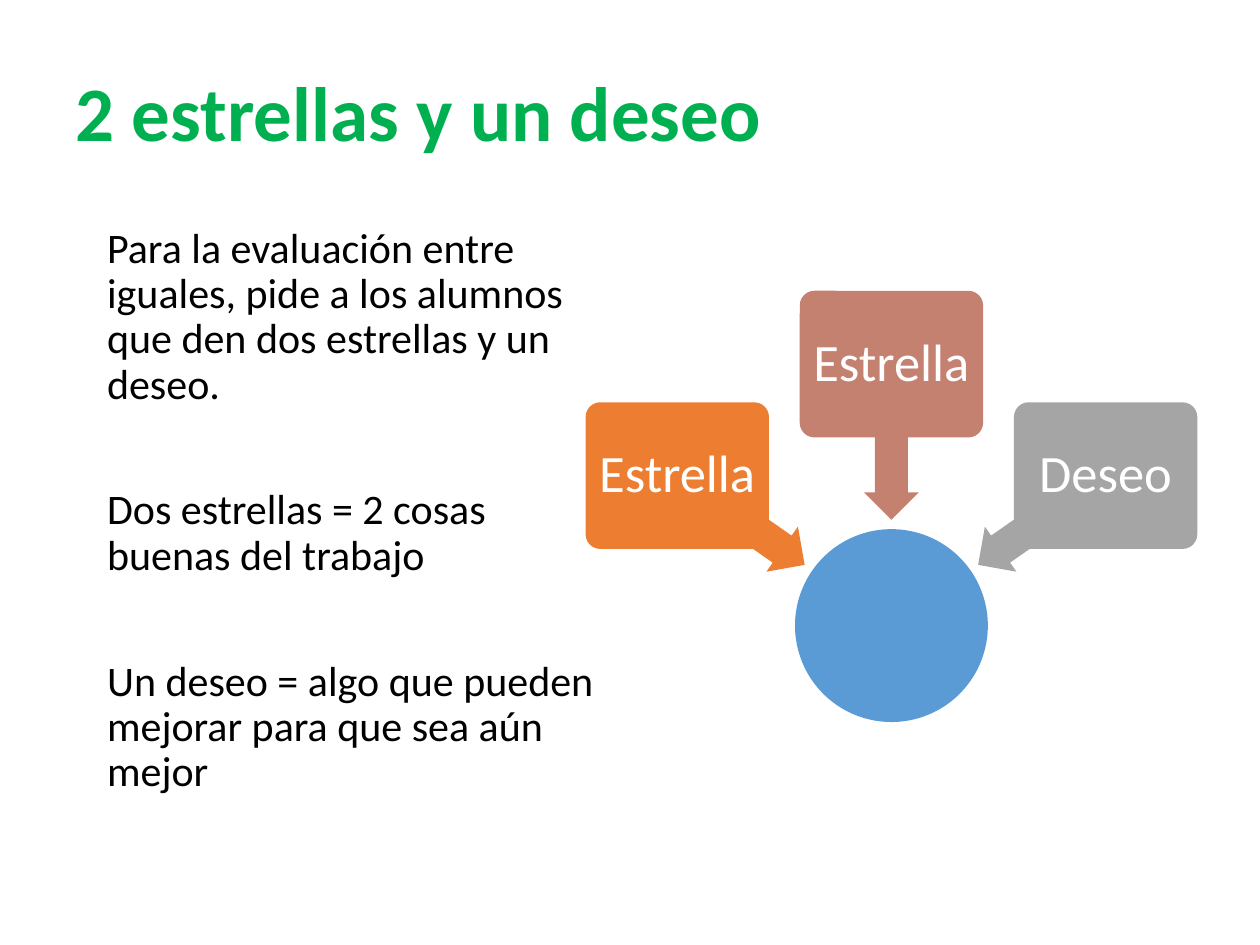
from math import cos, radians, sin

from pptx import Presentation
from pptx.dml.color import RGBColor
from pptx.enum import shapes, text
from pptx.util import Pt

GREEN = RGBColor(0x00, 0xB0, 0x50)
BLACK = RGBColor(0x00, 0x00, 0x00)
WHITE = RGBColor(0xFF, 0xFF, 0xFF)
BLUE = RGBColor(0x5B, 0x9B, 0xD5)
ORANGE = RGBColor(0xED, 0x7D, 0x31)
TERRACOTTA = RGBColor(0xC4, 0x81, 0x70)
GRAY = RGBColor(0xA5, 0xA5, 0xA5)

HUB = (509.4, 357.5)
HUB_SIZE = 110.2
ARROW_RADIUS = 104.8
BOX_RADIUS = 149.4

PARAGRAPHS = [
    "Para la evaluación entre iguales, pide a los alumnos que den dos estrellas y un deseo.",
    "Dos estrellas = 2 cosas buenas del trabajo",
    "Un deseo = algo que pueden mejorar para que sea aún mejor",
]
# Direction from the hub in clockwise degrees, label, colour
SPOKES = [
    (215, "Estrella", ORANGE),
    (270, "Estrella", TERRACOTTA),
    (325, "Deseo", GRAY),
]


def write(para, words, size, color, bold=False, align=text.PP_ALIGN.LEFT, before=0):
    para.alignment = align
    para.line_spacing = 0.9
    para.space_before = Pt(before)
    span = para.add_run()
    span.text = words
    span.font.name = "Calibri"
    span.font.size = Pt(size)
    span.font.bold = bold
    span.font.color.rgb = color


def place(shape, left, top, width, height):
    shape.left, shape.top = Pt(left), Pt(top)
    shape.width, shape.height = Pt(width), Pt(height)


def add_title(page, words):
    title = page.shapes.title
    place(title, 36, 21.6, 648, 90)
    frame = title.text_frame
    frame.auto_size = text.MSO_AUTO_SIZE.NONE
    frame.vertical_anchor = text.MSO_ANCHOR.MIDDLE
    write(frame.paragraphs[0], words, 44, GREEN, bold=True)


def add_body(page, paragraphs):
    body = page.placeholders[1]
    place(body, 36, 126, 318.2, 356.4)
    frame = body.text_frame
    frame.auto_size = text.MSO_AUTO_SIZE.NONE
    for index, words in enumerate(paragraphs):
        para = frame.add_paragraph() if index else frame.paragraphs[0]
        write(para, words, 24, BLACK, before=46 if index else 10)
        properties = para._p.get_or_add_pPr()
        properties.set("marL", str(Pt(18)))
        properties.set("indent", "0")
        properties.insert_element_before(
            properties.makeelement(
                "{http://schemas.openxmlformats.org/drawingml/2006/main}buNone", {}
            ),
            "a:tabLst", "a:defRPr", "a:extLst",
        )


def add_solid(group, kind, center, width, height, color, adjustments=()):
    """Add a borderless filled shape around a centre point."""
    x, y = center
    shape = group.shapes.add_shape(
        kind, Pt(x - width / 2), Pt(y - height / 2), Pt(width), Pt(height)
    )
    shape.shadow.inherit = False
    shape.fill.solid()
    shape.fill.fore_color.rgb = color
    shape.line.fill.background()
    for index, value in enumerate(adjustments):
        shape.adjustments[index] = value
    return shape


def around_hub(angle, radius):
    x, y = HUB
    return x + radius * cos(radians(angle)), y + radius * sin(radians(angle))


def add_spoke(group, angle, label, color):
    """Add a labelled box and the arrow from it to the hub."""
    arrow = add_solid(
        group, shapes.MSO_SHAPE.LEFT_ARROW, around_hub(angle, ARROW_RADIUS),
        88.6, 31.4, color, (0.6, 0.5),
    )
    arrow.rotation = angle
    box = add_solid(
        group, shapes.MSO_SHAPE.ROUNDED_RECTANGLE, around_hub(angle, BOX_RADIUS),
        104.8, 83.8, color, (0.1,),
    )
    frame = box.text_frame
    frame.word_wrap = True
    frame.vertical_anchor = text.MSO_ANCHOR.MIDDLE
    frame.margin_left = frame.margin_right = Pt(4.5)
    frame.margin_top = frame.margin_bottom = Pt(4.5)
    write(frame.paragraphs[0], label, 30, WHITE, align=text.PP_ALIGN.CENTER)


def main():
    deck = Presentation()
    deck.slide_width, deck.slide_height = Pt(720), Pt(540)
    page = deck.slides.add_slide(deck.slide_layouts[1])
    add_title(page, "2 estrellas y un deseo")
    add_body(page, PARAGRAPHS)
    diagram = page.shapes.add_group_shape()
    add_solid(diagram, shapes.MSO_SHAPE.OVAL, HUB, HUB_SIZE, HUB_SIZE, BLUE)
    for angle, label, color in SPOKES:
        add_spoke(diagram, angle, label, color)
    deck.save("out.pptx")


if __name__ == "__main__":
    main()
